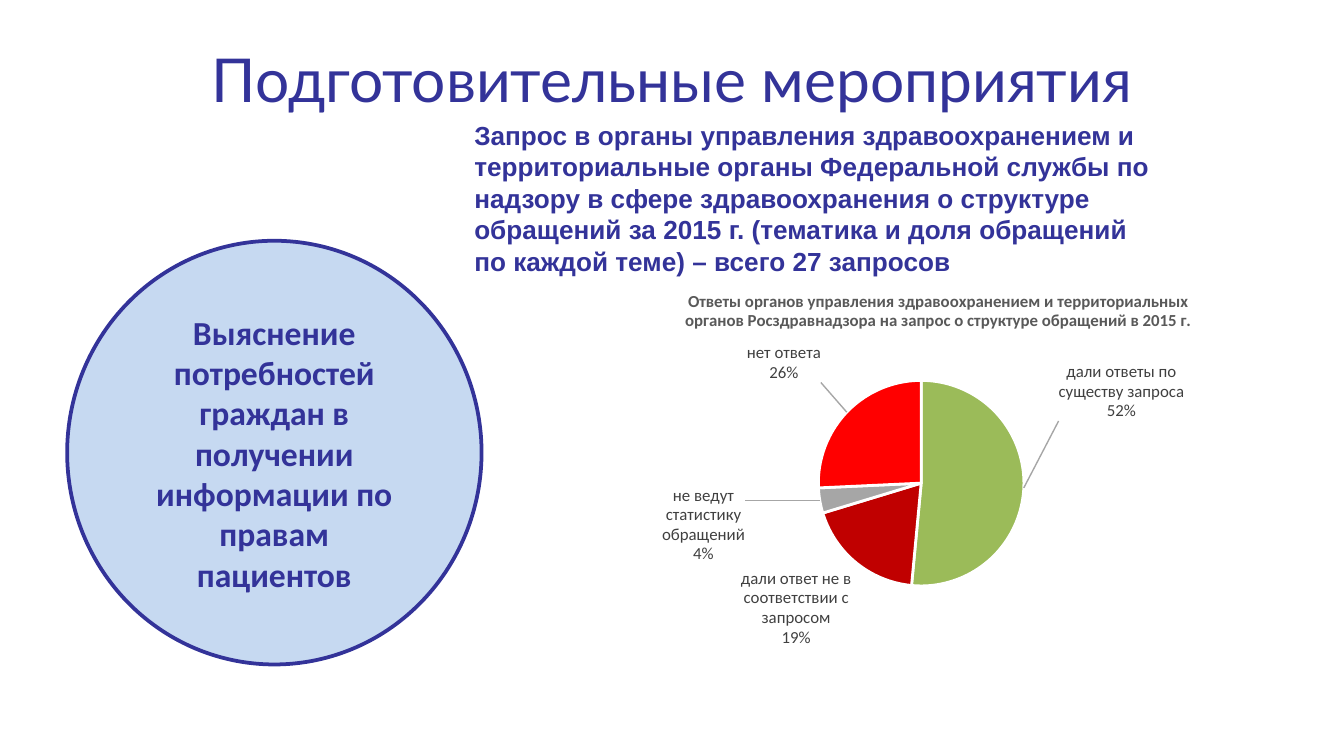
from copy import deepcopy
from dataclasses import dataclass

from pptx import Presentation
from pptx.chart.data import CategoryChartData
from pptx.dml.color import RGBColor
from pptx.enum.chart import XL_CHART_TYPE, XL_LABEL_POSITION
from pptx.enum.shapes import MSO_SHAPE
from pptx.enum.text import MSO_ANCHOR, PP_ALIGN
from pptx.oxml import parse_xml
from pptx.oxml.ns import qn
from pptx.util import Pt

PIE = XL_CHART_TYPE.PIE
OUTSIDE = XL_LABEL_POSITION.OUTSIDE_END
OVAL = MSO_SHAPE.OVAL
MIDDLE, TOP = MSO_ANCHOR.MIDDLE, MSO_ANCHOR.TOP
CENTER, LEFT = PP_ALIGN.CENTER, PP_ALIGN.LEFT
NAVY = "333399"
NS = ('xmlns:c="http://schemas.openxmlformats.org/drawingml/2006/chart" '
      'xmlns:a="http://schemas.openxmlformats.org/drawingml/2006/main"')


@dataclass
class Slice:
    name: str
    value: int
    color: str
    shift: tuple[float, float] | None = None


SLICES = [
    Slice("дали ответы по существу запроса", 52, "9BBB59", (0.04, -0.24)),
    Slice("дали ответ не в соответствии с запросом", 19, "C00000"),
    Slice("не ведут статистику обращений", 4, "A6A6A6", (-0.1, -0.04)),
    Slice("нет ответа", 26, "FF0000", (-0.03, -0.06)),
]


def rgb(color: str) -> RGBColor:
    return RGBColor.from_string(color)


def style_font(font, name: str, size: float, color: str, bold: bool = False) -> None:
    font.name, font.size, font.bold = name, Pt(size), bold
    font.color.rgb = rgb(color)


def write(sp, text: str, name: str, size: float, bold: bool, align, anchor) -> None:
    tf = sp.text_frame
    tf.word_wrap = True
    tf.vertical_anchor = anchor
    p = tf.paragraphs[0]
    p.text = text
    p.alignment = align
    style_font(p.font, name, size, NAVY, bold)


def layout_xml(x: float, y: float, size: str = "", edges: str = "") -> str:
    return (f'<c:layout {NS}><c:manualLayout>{edges}<c:x val="{x}"/><c:y val="{y}"/>'
            f'{size}</c:manualLayout></c:layout>')


def place_plot(chart) -> None:
    area = chart.element.find(".//" + qn("c:plotArea"))
    for old in area.findall(qn("c:layout")):
        area.remove(old)
    edges = ('<c:layoutTarget val="inner"/><c:xMode val="edge"/>'
             '<c:yMode val="edge"/>')
    size = '<c:w val="0.31"/><c:h val="0.51"/>'
    area.insert(0, parse_xml(layout_xml(0.32, 0.27, size, edges)))


def place_labels(chart, slices: list[Slice]) -> None:
    labels = chart.element.find(".//" + qn("c:ser")).find(qn("c:dLbls"))
    for old in labels.findall(qn("c:showLeaderLines")):
        labels.remove(old)
    labels.append(parse_xml(f'<c:separator {NS}>\n</c:separator>'))
    shared = list(labels)
    moved = [(i, s.shift) for i, s in enumerate(slices) if s.shift]
    for pos, (i, shift) in enumerate(moved):
        label = parse_xml(f'<c:dLbl {NS}><c:idx val="{i}"/>{layout_xml(*shift)}</c:dLbl>')
        label.extend(deepcopy(child) for child in shared)
        labels.insert(pos, label)
    labels.append(parse_xml(f'<c:showLeaderLines {NS} val="1"/>'))
    labels.append(parse_xml(
        f'<c:leaderLines {NS}><c:spPr><a:ln w="9525"><a:solidFill>'
        '<a:srgbClr val="A6A6A6"/></a:solidFill></a:ln></c:spPr></c:leaderLines>'))


def add_pie(s, title: str, slices: list[Slice]) -> None:
    data = CategoryChartData()
    data.categories = [item.name for item in slices]
    data.add_series("Series 1", [item.value for item in slices])
    chart = s.shapes.add_chart(PIE, Pt(322.5), Pt(145.5), Pt(360), Pt(216), data).chart
    style_font(chart.font, "Calibri", 10, "000000")
    chart.has_legend = False
    chart.has_title = True
    p = chart.chart_title.text_frame.paragraphs[0]
    p.text = title
    style_font(p.font, "Calibri", 9, "595959", True)
    chart.chart_title.include_in_layout = False
    chart.plots[0].vary_by_categories = True
    series = chart.plots[0].series[0]
    for i, item in enumerate(slices):
        fmt = series.points[i].format
        fmt.fill.solid()
        fmt.fill.fore_color.rgb = rgb(item.color)
        fmt.line.color.rgb = rgb("FFFFFF")
        fmt.line.width = Pt(1.5)
    labels = series.data_labels
    style_font(labels.font, "Calibri", 9, "404040")
    labels.number_format = '0"%"'
    labels.number_format_is_linked = False
    labels.show_value = labels.show_category_name = True
    labels.position = OUTSIDE
    place_plot(chart)
    place_labels(chart, slices)


def main() -> None:
    """Build the slide on preparatory activities."""
    prs = Presentation()
    prs.slide_width, prs.slide_height = Pt(720), Pt(405)
    s = prs.slides.add_slide(prs.slide_layouts[5])

    title = s.shapes.title
    title.left, title.top, title.width, title.height = Pt(36), Pt(16.5), Pt(648), Pt(50.5)
    write(title, "Подготовительные мероприятия", "Lato", 32.4, False, CENTER, MIDDLE)

    goal = s.shapes.add_shape(OVAL, Pt(36), Pt(129), Pt(222), Pt(227))
    goal.shadow.inherit = False
    goal.fill.solid()
    goal.fill.fore_color.rgb = rgb("C6D9F1")
    goal.line.color.rgb = rgb(NAVY)
    goal.line.width = Pt(2)
    write(goal, "Выяснение потребностей граждан в получении информации по правам пациентов",
          "Calibri", 18, True, CENTER, MIDDLE)

    request = s.shapes.add_textbox(Pt(247), Pt(60.5), Pt(379.5), Pt(92))
    write(request, "Запрос в органы управления здравоохранением и территориальные органы "
          "Федеральной службы по надзору в сфере здравоохранения о структуре обращений "
          "за 2015 г. (тематика и доля обращений по каждой теме) – всего 27 запросов",
          "Arial", 14, True, LEFT, TOP)

    add_pie(s, "Ответы органов управления здравоохранением и территориальных органов "
            "Росздравнадзора на запрос о структуре обращений в 2015 г.", SLICES)
    prs.save("out.pptx")


if __name__ == "__main__":
    main()
